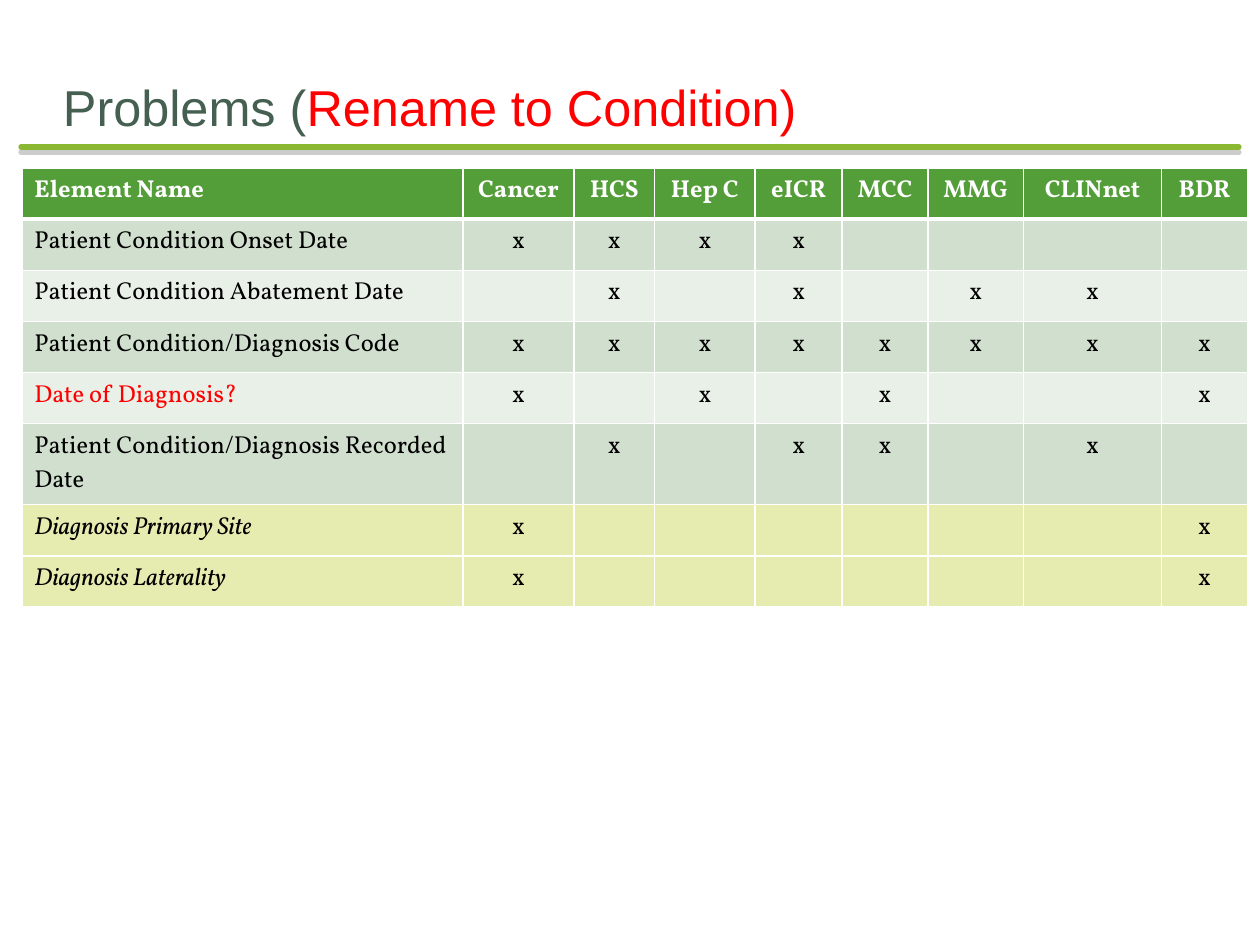
from lxml import etree
from pptx import Presentation
from pptx.dml.color import RGBColor
from pptx.enum.shapes import MSO_CONNECTOR
from pptx.enum.text import MSO_ANCHOR, PP_ALIGN
from pptx.oxml.ns import qn
from pptx.util import Pt

STRAIGHT = MSO_CONNECTOR.STRAIGHT
BOTTOM = MSO_ANCHOR.BOTTOM
LEFT, CENTER = PP_ALIGN.LEFT, PP_ALIGN.CENTER

COLORS = {
    "title": "455F51", "red": "FF0000", "black": "000000", "white": "FFFFFF",
    "rule": "8AB833", "shadow": "808080", "header": "549E39",
    "dark": "D1DFCE", "light": "E9F0E8", "lime": "E6ECB0",
}
HEADINGS = ["Element Name", "Cancer", "HCS", "Hep C", "eICR", "MCC", "MMG", "CLINnet", "BDR"]
WIDTHS = [252, 63.6, 46, 57.5, 49.7, 49, 54.6, 79, 49]
ELEMENTS = [
    ("Patient Condition Onset Date", "xxxx----", "dark", "black"),
    ("Patient Condition Abatement Date", "-x-x-xx-", "light", "black"),
    ("Patient Condition/Diagnosis Code", "xxxxxxxx", "dark", "black"),
    ("Date of Diagnosis?", "x-x-x--x", "light", "red"),
    ("Patient Condition/Diagnosis Recorded Date", "-x-xx-x-", "dark", "black"),
    ("Diagnosis Primary Site", "x------x", "lime", "black"),
    ("Diagnosis Laterality", "x------x", "lime", "black"),
]
ROW_HEIGHT, TALL_ROW_HEIGHT = 29.25, 46.3
TALL_ROW = 5


def add_span(para, text, font, size, color, bold=False, italic=False):
    span = para.add_run()
    span.text = text
    span.font.name = font
    span.font.size = Pt(size)
    span.font.bold = bold
    span.font.italic = italic
    span.font.color.rgb = RGBColor.from_string(COLORS[color])


def style_cell(cell, fill, bottom_width):
    properties = cell._tc.get_or_add_tcPr()
    for side, width in (("L", 1), ("R", 1), ("T", 1), ("B", bottom_width)):
        border = etree.SubElement(properties, qn(f"a:ln{side}"), w=str(Pt(width)))
        solid = etree.SubElement(border, qn("a:solidFill"))
        etree.SubElement(solid, qn("a:srgbClr"), val=COLORS["white"])
    cell.fill.solid()
    cell.fill.fore_color.rgb = RGBColor.from_string(COLORS[fill])


deck = Presentation()
deck.slide_width, deck.slide_height = Pt(720), Pt(540)
page = deck.slides.add_slide(deck.slide_layouts[6])

rule = page.shapes.add_connector(STRAIGHT, Pt(12), Pt(84), Pt(708), Pt(84))
rule.line.width = Pt(3)
rule.line.color.rgb = RGBColor.from_string(COLORS["rule"])
rule.line._get_or_add_ln().set("cap", "rnd")
effects = etree.SubElement(rule._element.spPr, qn("a:effectLst"))
shadow = etree.SubElement(effects, qn("a:outerShdw"), dist=str(Pt(3)), dir="5400000")
shadow_color = etree.SubElement(shadow, qn("a:srgbClr"), val=COLORS["shadow"])
etree.SubElement(shadow_color, qn("a:alpha"), val="40000")

title_box = page.shapes.add_textbox(Pt(36), Pt(36), Pt(648), Pt(42))
frame = title_box.text_frame
frame.word_wrap = True
frame.vertical_anchor = BOTTOM
frame.margin_left = frame.margin_right = frame.margin_bottom = 0
frame.margin_top = Pt(3.6)
add_span(frame.paragraphs[0], "Problems (", "Arial", 28.8, "title")
add_span(frame.paragraphs[0], "Rename to Condition)", "Arial", 28.8, "red")

row_count = len(ELEMENTS) + 1
table = page.shapes.add_table(
    row_count, len(HEADINGS), Pt(12.5), Pt(96), Pt(sum(WIDTHS)),
    Pt(ROW_HEIGHT * (row_count - 1) + TALL_ROW_HEIGHT),
).table
for column, width in zip(table.columns, WIDTHS):
    column.width = Pt(width)
for index, row in enumerate(table.rows):
    row.height = Pt(TALL_ROW_HEIGHT if index == TALL_ROW else ROW_HEIGHT)

for index, heading in enumerate(HEADINGS):
    cell = table.cell(0, index)
    style_cell(cell, "header", 3)
    para = cell.text_frame.paragraphs[0]
    para.alignment = CENTER if index else LEFT
    add_span(para, heading, "Vollkorn", 14, "white", bold=True)

for row_index, (name, marks, fill, color) in enumerate(ELEMENTS, 1):
    for index, text in enumerate([name, *marks]):
        cell = table.cell(row_index, index)
        style_cell(cell, fill, 1)
        para = cell.text_frame.paragraphs[0]
        if index == 0:
            add_span(para, text, "Vollkorn", 14, color, italic=fill == "lime")
        elif text == "x":
            para.alignment = CENTER
            add_span(para, text, "Vollkorn", 14, "black")

deck.save("out.pptx")
